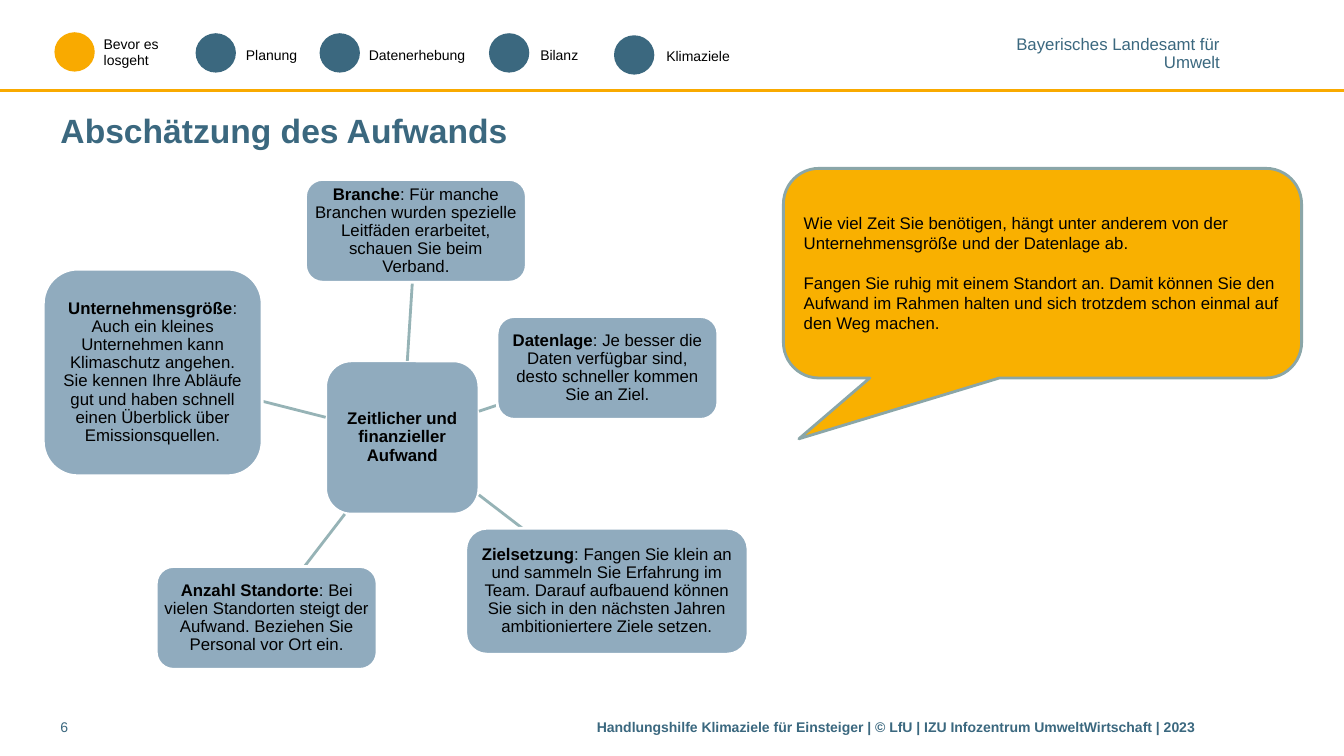
from dataclasses import dataclass
from typing import NamedTuple

import lxml.etree
import pptx
import pptx.dml.color
import pptx.enum.shapes
import pptx.enum.text
import pptx.oxml.ns
import pptx.util

PX = 9144  # 100 px to the inch
SHAPE = pptx.enum.shapes.MSO_SHAPE
ALIGN = pptx.enum.text.PP_ALIGN
ANCHOR = pptx.enum.text.MSO_ANCHOR


@dataclass(frozen=True)
class Theme:
    font: str = "Arial"
    blue: str = "3B687F"
    gold: str = "F9AA00"
    amber: str = "F9B000"
    mist: str = "90ABBE"
    sage: str = "96B3B6"
    rim: str = "8AA6A8"
    white: str = "FFFFFF"
    black: str = "000000"
    head: int = 24
    body: int = 12
    small: int = 10
    stroke: int = 2


THEME = Theme()


class Box(NamedTuple):
    x: int
    y: int
    w: int
    h: int


class Run(NamedTuple):
    text: str
    bold: bool = False


class Step(NamedTuple):
    x: int
    y: int
    fill: str
    label: Box
    lines: list[str]


class Node(NamedTuple):
    box: Box
    start: tuple[int, int]
    end: tuple[int, int]
    name: str
    text: str


STEPS = [
    Step(54, 32, THEME.gold, Box(93, 30, 82, 44), ["Bevor es", "losgeht"]),
    Step(194, 33, THEME.blue, Box(234, 41, 149, 27), ["Planung"]),
    Step(317, 33, THEME.blue, Box(356, 41, 149, 27), ["Datenerhebung"]),
    Step(485, 33, THEME.blue, Box(526, 41, 149, 27), ["Bilanz"]),
    Step(609, 35, THEME.blue, Box(651, 42, 149, 27), ["Klimaziele"]),
]

NODES = [
    Node(Box(303, 178, 219, 102), (404, 358), (409, 280), "Branche",
         ": Für manche Branchen wurden spezielle Leitfäden erarbeitet, "
         "schauen Sie beim Verband."),
    Node(Box(493, 314, 219, 102), (475, 408), (493, 402), "Datenlage",
         ": Je besser die Daten verfügbar sind, desto schneller kommen "
         "Sie an Ziel."),
    Node(Box(462, 524, 280, 125), (475, 491), (518, 524), "Zielsetzung",
         ": Fangen Sie klein an und sammeln Sie Erfahrung im Team. Darauf "
         "aufbauend können Sie sich in den nächsten Jahren ambitioniertere "
         "Ziele setzen."),
    Node(Box(155, 562, 219, 102), (342, 510), (302, 562), "Anzahl Standorte",
         ": Bei vielen Standorten steigt der Aufwand. Beziehen Sie Personal "
         "vor Ort ein."),
    Node(Box(43, 267, 217, 205), (323, 414), (260, 398), "Unternehmensgröße",
         ": Auch ein kleines Unternehmen kann Klimaschutz angehen. Sie kennen "
         "Ihre Abläufe gut und haben schnell einen Überblick über "
         "Emissionsquellen."),
]

ADVICE = [
    "Wie viel Zeit Sie benötigen, hängt unter anderem von der "
    "Unternehmensgröße und der Datenlage ab.",
    "Fangen Sie ruhig mit einem Standort an. Damit können Sie den Aufwand im "
    "Rahmen halten und sich trotzdem schon einmal auf den Weg machen.",
]


def emu(box: Box) -> list[int]:
    return [side * PX for side in box]


def rgb(code: str):
    return pptx.dml.color.RGBColor.from_string(code)


def write(frame, paras: list[list[Run]], size: int, color: str,
          align=ALIGN.LEFT, ratio: float = 1.0, gap: int = 0,
          pad: tuple[int, int] = (10, 5), anchor=ANCHOR.TOP,
          wrap: bool = True) -> None:
    """Fill a text frame; pad is the side and the top inset, gap is in points."""
    frame.word_wrap = wrap
    frame.auto_size = pptx.enum.text.MSO_AUTO_SIZE.NONE
    frame.vertical_anchor = anchor
    frame.margin_left = frame.margin_right = pad[0] * PX
    frame.margin_top = frame.margin_bottom = pad[1] * PX
    for i, runs in enumerate(paras):
        para = frame.add_paragraph() if i else frame.paragraphs[0]
        para.alignment = align
        para.line_spacing = ratio
        if i:
            para.space_before = pptx.util.Pt(gap)
        for part in runs:
            run = para.add_run()
            run.text = part.text
            run.font.name = THEME.font
            run.font.size = pptx.util.Pt(size)
            run.font.bold = part.bold
            run.font.color.rgb = rgb(color)


def label(slide, box: Box, paras: list[list[Run]], size: int, color: str,
          **style) -> None:
    write(slide.shapes.add_textbox(*emu(box)).text_frame, paras, size, color,
          **style)


def shape(slide, kind, box: Box, fill: str, edge: str = ""):
    item = slide.shapes.add_shape(kind, *emu(box))
    item.shadow.inherit = False
    item.fill.solid()
    item.fill.fore_color.rgb = rgb(fill)
    if edge:
        item.line.color.rgb = rgb(edge)
        item.line.width = pptx.util.Pt(THEME.stroke)
    else:
        item.line.fill.background()
    return item


def rule(slide, start: tuple[int, int], end: tuple[int, int],
         color: str) -> None:
    ends = [value * PX for value in start + end]
    line = slide.shapes.add_connector(
        pptx.enum.shapes.MSO_CONNECTOR.STRAIGHT, *ends)
    line.line.color.rgb = rgb(color)
    line.line.width = pptx.util.Pt(THEME.stroke)
    lxml.etree.SubElement(line._element.spPr,
                          pptx.oxml.ns.qn("a:effectLst"))


def bubble(slide, box: Box, runs: list[Run]) -> None:
    item = shape(slide, SHAPE.ROUNDED_RECTANGLE, box, THEME.mist, THEME.white)
    write(item.text_frame, [runs], THEME.body, THEME.black,
          align=ALIGN.CENTER, ratio=0.9, pad=(3, 3), anchor=ANCHOR.MIDDLE)


def main() -> None:
    deck = pptx.Presentation()
    deck.slide_width, deck.slide_height = 1333 * PX, 750 * PX
    slide = deck.slides.add_slide(deck.slide_layouts[5])

    # Title
    title = slide.shapes.title
    title.left, title.top, title.width, title.height = emu(
        Box(60, 102, 1231, 55))
    write(title.text_frame, [[Run("Abschätzung des Aufwands", True)]],
          THEME.head, THEME.blue, pad=(0, 5), anchor=ANCHOR.MIDDLE)

    # Header with progress steps
    rule(slide, (0, 90), (1333, 90), THEME.gold)
    label(slide, Box(1007, 37, 203, 34),
          [[Run("Bayerisches Landesamt für")], [Run("Umwelt")]],
          THEME.body, THEME.blue, align=ALIGN.RIGHT, ratio=0.85, pad=(0, 0),
          wrap=False)
    for step in STEPS:
        shape(slide, SHAPE.OVAL, Box(step.x, step.y, 40, 39), step.fill)
        label(slide, step.label, [[Run(line)] for line in step.lines],
              THEME.small, THEME.black)

    # Hub and its spokes
    bubble(slide, Box(323, 358, 152, 152),
           [Run("Zeitlicher und finanzieller Aufwand", True)])
    for node in NODES:
        rule(slide, node.start, node.end, THEME.sage)
        bubble(slide, node.box, [Run(node.name, True), Run(node.text)])

    # Speech bubble
    speech = shape(slide, SHAPE.ROUNDED_RECTANGULAR_CALLOUT,
                   Box(777, 167, 514, 208), THEME.amber, THEME.rim)
    speech.adjustments[0] = -0.47
    speech.adjustments[1] = 0.79
    speech.adjustments[2] = 0.17
    write(speech.text_frame, [[Run(text)] for text in ADVICE],
          THEME.body, THEME.black, gap=14, anchor=ANCHOR.MIDDLE)

    # Footer
    label(slide, Box(592, 708, 699, 31),
          [[Run("Handlungshilfe Klimaziele für Einsteiger | © LfU | "
                "IZU Infozentrum UmweltWirtschaft | 2023", True)]],
          THEME.small, THEME.blue, pad=(0, 5))
    label(slide, Box(60, 708, 70, 31), [[Run("6")]],
          THEME.small, THEME.blue, pad=(0, 5))

    deck.save("out.pptx")


if __name__ == "__main__":
    main()
